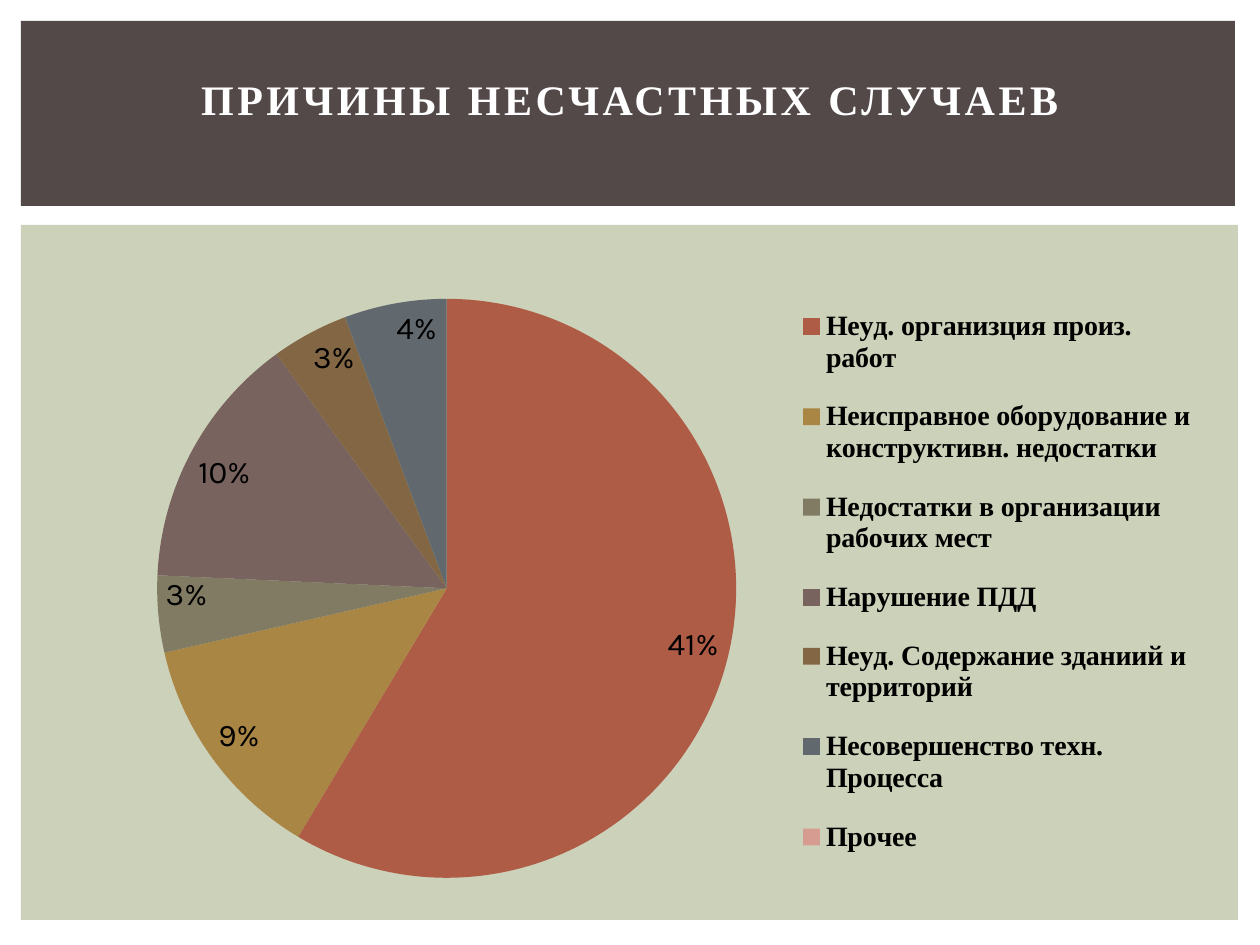
from lxml import etree
from pptx import Presentation
from pptx.chart.data import CategoryChartData
from pptx.dml.color import RGBColor
from pptx.enum.chart import XL_CHART_TYPE, XL_LABEL_POSITION, XL_LEGEND_POSITION
from pptx.enum.shapes import MSO_SHAPE
from pptx.enum.text import MSO_ANCHOR, MSO_AUTO_SIZE, PP_ALIGN
from pptx.oxml.ns import qn
from pptx.util import Emu, Pt

PIE = XL_CHART_TYPE.PIE
INSIDE_END = XL_LABEL_POSITION.INSIDE_END
LEGEND_RIGHT = XL_LEGEND_POSITION.RIGHT
RECTANGLE = MSO_SHAPE.RECTANGLE

PX_PER_INCH = 126
SLIDE_SIZE = (1260, 945)
HEADER_BOX = (21, 21, 1214, 185)
BODY_BOX = (21, 225, 1217, 695)

HEADER_FILL = RGBColor(0x53, 0x49, 0x49)
BODY_FILL = RGBColor(0xCC, 0xD1, 0xB9)
WHITE = RGBColor(0xFF, 0xFF, 0xFF)
BLACK = RGBColor(0x00, 0x00, 0x00)

SERIF = "Times New Roman"
SANS = "Karla"

# Cause, share in percent, slice colour
CAUSES = [
    ("Неуд. организция произ. работ", 41, RGBColor(0xAF, 0x5C, 0x46)),
    ("Неисправное оборудование и конструктивн. недостатки", 9, RGBColor(0xA9, 0x86, 0x44)),
    ("Недостатки в организации рабочих мест", 3, RGBColor(0x82, 0x7B, 0x63)),
    ("Нарушение ПДД", 10, RGBColor(0x78, 0x63, 0x5E)),
    ("Неуд. Содержание зданиий и территорий", 3, RGBColor(0x83, 0x67, 0x45)),
    ("Несовершенство техн. Процесса", 4, RGBColor(0x62, 0x69, 0x6E)),
    ("Прочее", 0, RGBColor(0xD6, 0x9C, 0x91)),
]


def px(length):
    return Emu(round(length * 914400 / PX_PER_INCH))


def add_panel(slide, box, color):
    panel = slide.shapes.add_shape(RECTANGLE, *map(px, box))
    panel.shadow.inherit = False
    panel.fill.solid()
    panel.fill.fore_color.rgb = color
    panel.line.fill.background()


def set_manual_layout(parent, index, fractions, inner=False):
    """Fix a chart part at (x, y, width, height) fractions of the chart."""
    for old_layout in parent.findall(qn("c:layout")):
        parent.remove(old_layout)
    layout = etree.Element(qn("c:layout"))
    manual = etree.SubElement(layout, qn("c:manualLayout"))
    settings = [("layoutTarget", "inner")] if inner else []
    settings += [("xMode", "edge"), ("yMode", "edge")]
    settings += zip("xywh", fractions)
    for name, value in settings:
        etree.SubElement(manual, qn(f"c:{name}")).set("val", str(value))
    parent.insert(index, layout)


def build_header(slide, box):
    left, top, width, height = box
    add_panel(slide, box, HEADER_FILL)

    # Title placeholder, brought in front of the panel
    title = slide.shapes.title
    title._element.getparent().append(title._element)
    title.left, title.top = px(left + 42), px(top + 52)
    title.width, title.height = px(width - 80), px(height - 96)
    frame = title.text_frame
    frame.word_wrap = True
    frame.auto_size = MSO_AUTO_SIZE.NONE
    frame.vertical_anchor = MSO_ANCHOR.TOP
    frame.margin_top = 0
    frame.text = "ПРИЧИНЫ НЕСЧАСТНЫХ СЛУЧАЕВ"
    paragraph = frame.paragraphs[0]
    paragraph.alignment = PP_ALIGN.CENTER
    paragraph.font.name = SERIF
    paragraph.font.size = Pt(24)
    paragraph.font.bold = True
    paragraph.font.color.rgb = WHITE
    paragraph.runs[0].font._element.set("spc", "200")


def build_causes_chart(slide, box):
    left, top, width, height = box
    add_panel(slide, box, BODY_FILL)

    data = CategoryChartData(number_format="0")
    data.categories = [name for name, _, _ in CAUSES]
    data.add_series("Series 1", [share for _, share, _ in CAUSES])
    chart_box = (left + 32, top + 12, width - 59, height - 32)
    chart = slide.shapes.add_chart(PIE, *map(px, chart_box), data).chart
    chart.has_title = False
    chart.font.name = SANS
    chart.font.size = Pt(18)
    chart.font.color.rgb = BLACK

    # Slices
    plot = chart.plots[0]
    plot.vary_by_categories = True
    for index, (_, _, color) in enumerate(CAUSES):
        fill = plot.series[0].points[index].format.fill
        fill.solid()
        fill.fore_color.rgb = color

    # Labels: the empty sections of the format hide the zero share
    plot.has_data_labels = True
    labels = plot.data_labels
    labels.show_value = True
    labels.number_format = '0"%";;'
    labels.number_format_is_linked = False
    labels.position = INSIDE_END
    labels.font.name = SANS
    labels.font.size = Pt(18)
    labels.font.color.rgb = BLACK

    # Legend
    chart.has_legend = True
    legend = chart.legend
    legend.position = LEGEND_RIGHT
    legend.include_in_layout = False
    legend.font.name = SERIF
    legend.font.size = Pt(16)
    legend.font.bold = True
    legend.font.color.rgb = BLACK

    plot_area = chart._chartSpace.chart.plotArea
    set_manual_layout(plot_area, 0, (0.09, 0.09, 0.5, 0.88), inner=True)
    set_manual_layout(legend._element, 1, (0.64, 0.07, 0.35, 0.9))


def main():
    presentation = Presentation()
    presentation.slide_width, presentation.slide_height = map(px, SLIDE_SIZE)
    slide = presentation.slides.add_slide(presentation.slide_layouts[5])
    build_header(slide, HEADER_BOX)
    build_causes_chart(slide, BODY_BOX)
    presentation.save("out.pptx")


if __name__ == "__main__":
    main()
